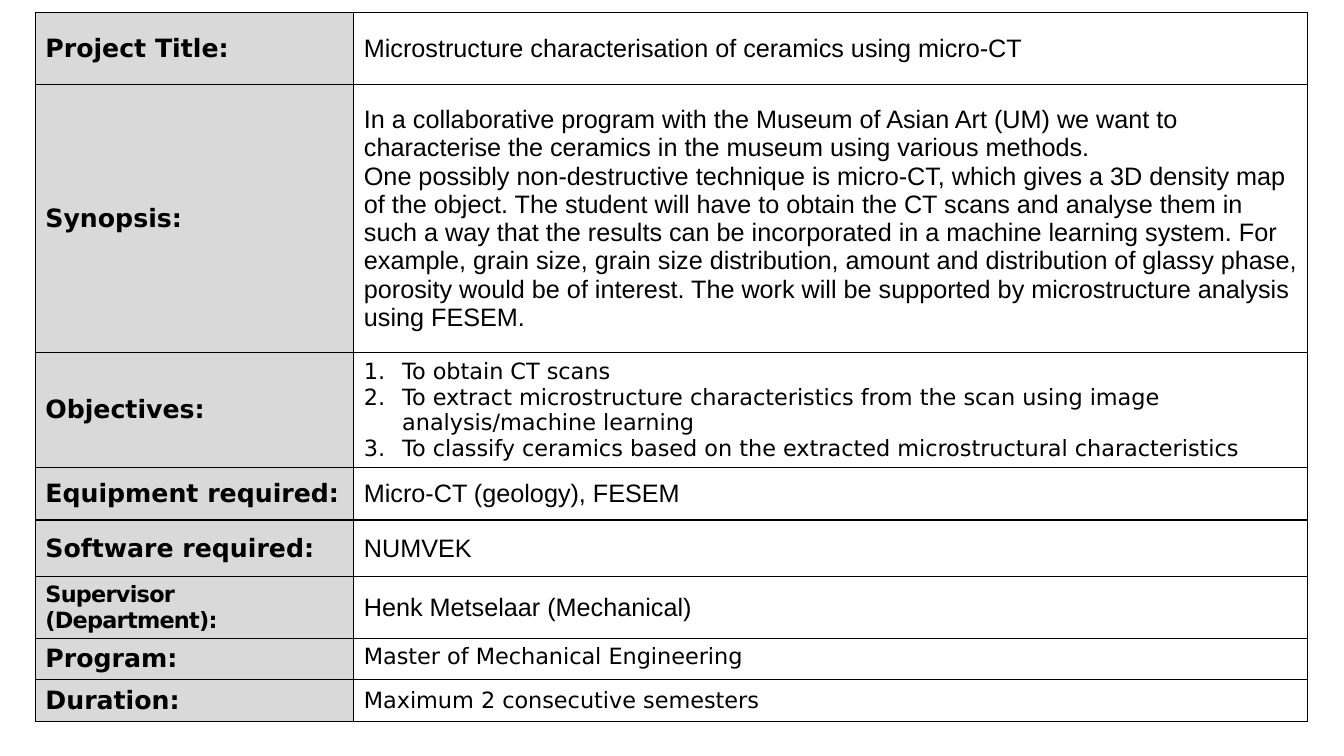
from dataclasses import dataclass

from pptx import Presentation
from pptx.dml.color import RGBColor as Color
from pptx.enum.text import MSO_VERTICAL_ANCHOR as Anchor
from pptx.oxml.ns import qn
from pptx.util import Inches, Pt
from lxml.etree import SubElement


@dataclass(frozen=True)
class Theme:
    ink: str = "000000"
    label_fill: str = "D9D9D9"
    heading_font: str = "DejaVu Sans"
    body_font: str = "Arial"
    large: float = 18
    medium: float = 16
    tiny: float = 5
    border: float = 0.96
    tight: float = -0.5
    list_indent: float = 0.38


@dataclass(frozen=True)
class Entry:
    label: str
    lines: tuple
    height: float
    plain: bool = True
    numbered: bool = False
    tight_label: bool = False
    anchor: Anchor = Anchor.MIDDLE


COLUMNS = (23.7, 70.97)
LEFT, TOP = 2.63, 1.6

ENTRIES = (
    Entry("Project Title:", ("Microstructure characterisation of ceramics using micro-CT",), 9.6),
    Entry("Synopsis:", (
        "In a collaborative program with the Museum of Asian Art (UM) we want to "
        "characterise the ceramics in the museum using various methods.",
        "One possibly non-destructive technique is micro-CT, which gives a 3D density map "
        "of the object. The student will have to obtain the CT scans and analyse them in "
        "such a way that the results can be incorporated in a machine learning system. For "
        "example, grain size, grain size distribution, amount and distribution of glassy phase, "
        "porosity would be of interest. The work will be supported by microstructure analysis "
        "using FESEM.",
    ), 35.47),
    Entry("Objectives:", (
        "To obtain CT scans",
        "To extract microstructure characteristics from the scan using image "
        "analysis/machine learning",
        "To classify ceramics based on the extracted microstructural characteristics",
    ), 15.2, plain=False, numbered=True),
    Entry("Equipment required:", ("Micro-CT (geology), FESEM",), 6.93),
    Entry("Software required:", ("NUMVEK",), 7.47),
    Entry("Supervisor (Department):", ("Henk Metselaar (Mechanical)",), 5.47, tight_label=True),
    Entry("Program:", ("Master of Mechanical Engineering",), 5.47, plain=False, anchor=Anchor.TOP),
    Entry("Duration:", ("Maximum 2 consecutive semesters",), 5.47, plain=False),
)


class ProjectSheet:
    def __init__(self, presentation, theme):
        self.theme = theme
        self.width = presentation.slide_width
        self.height = presentation.slide_height
        self.slide = presentation.slides.add_slide(presentation.slide_layouts[6])

    def across(self, percent):
        return round(self.width * percent / 100)

    def down(self, percent):
        return round(self.height * percent / 100)

    def table(self, entries):
        heights = [self.down(entry.height) for entry in entries]
        widths = [self.across(column) for column in COLUMNS]
        table = self.slide.shapes.add_table(
            len(entries), len(widths), self.across(LEFT), self.down(TOP),
            sum(widths), sum(heights)).table
        table.first_row = table.horz_banding = False
        for column, width in zip(table.columns, widths):
            column.width = width
        for row, height, entry in zip(table.rows, heights, entries):
            row.height = height
            label_cell, value_cell = row.cells
            self.label(label_cell, entry)
            self.value(value_cell, entry)

    def label(self, cell, entry):
        self.frame(cell, Anchor.MIDDLE, self.theme.label_fill)
        paragraph = cell.text_frame.paragraphs[0]
        style = {"name": self.theme.heading_font, "bold": True}
        if not entry.tight_label:
            self.run(paragraph, entry.label, size=Pt(self.theme.large), **style)
            return
        first, gap, second = entry.label.partition(" ")
        for text, size in ((first, self.theme.medium), (gap, self.theme.tiny),
                           (second, self.theme.medium)):
            run = self.run(paragraph, text, size=Pt(size), **style)
            run.font._element.set("spc", str(round(self.theme.tight * 100)))

    def value(self, cell, entry):
        self.frame(cell, entry.anchor)
        theme = self.theme
        name, size = ((theme.body_font, theme.large) if entry.plain
                      else (theme.heading_font, theme.medium))
        for index, line in enumerate(entry.lines):
            text_frame = cell.text_frame
            paragraph = text_frame.add_paragraph() if index else text_frame.paragraphs[0]
            if entry.numbered:
                self.number(paragraph)
            self.run(paragraph, line, name=name, size=Pt(size), bold=False)

    def run(self, paragraph, text, **style):
        run = paragraph.add_run()
        run.text = text
        for attribute, setting in style.items():
            setattr(run.font, attribute, setting)
        run.font.color.rgb = Color.from_string(self.theme.ink)
        return run

    def number(self, paragraph):
        properties = paragraph._p.get_or_add_pPr()
        indent = Inches(self.theme.list_indent)
        properties.set("marL", str(indent))
        properties.set("indent", str(-indent))
        color = SubElement(properties, qn("a:buClr"))
        SubElement(color, qn("a:srgbClr"), val=self.theme.ink)
        SubElement(properties, qn("a:buAutoNum"), type="arabicPeriod")

    def frame(self, cell, anchor, fill=None):
        cell.vertical_anchor = anchor
        properties = cell._tc.get_or_add_tcPr()
        for side in ("lnL", "lnR", "lnT", "lnB"):
            line = SubElement(properties, qn(f"a:{side}"), w=str(Pt(self.theme.border)))
            paint = SubElement(line, qn("a:solidFill"))
            SubElement(paint, qn("a:srgbClr"), val=self.theme.ink)
        if fill:
            cell.fill.solid()
            cell.fill.fore_color.rgb = Color.from_string(fill)
        else:
            cell.fill.background()


def main():
    presentation = Presentation()
    for attribute, length in {"slide_width": 13.33, "slide_height": 7.5}.items():
        setattr(presentation, attribute, Inches(length))
    ProjectSheet(presentation, Theme()).table(ENTRIES)
    presentation.save("out.pptx")


if __name__ == "__main__":
    main()
